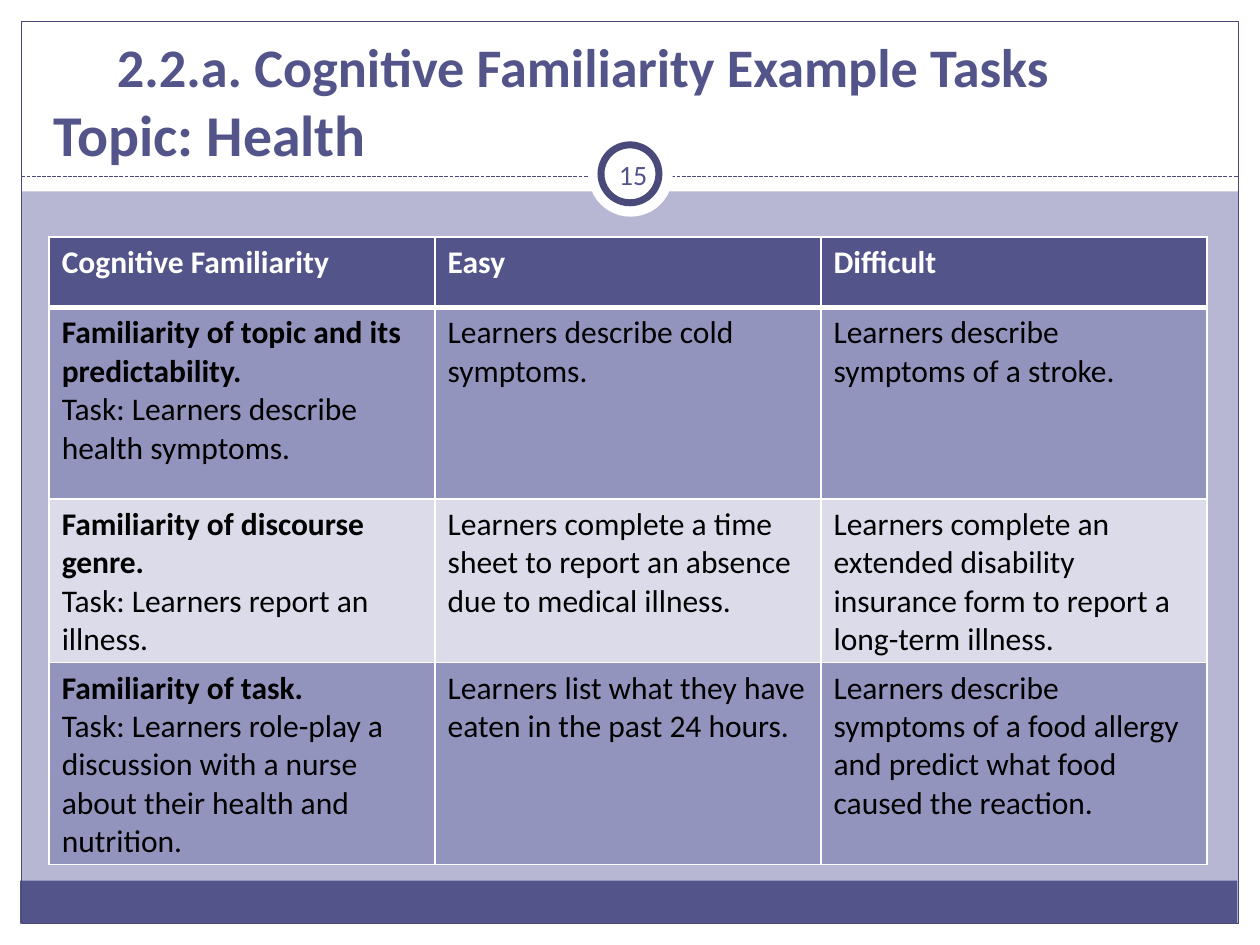
"""Build the slide on cognitive familiarity example tasks."""
from lxml.etree import SubElement
from pptx import Presentation
from pptx.dml.color import RGBColor
from pptx.enum.dml import MSO_LINE
from pptx.enum.shapes import MSO_CONNECTOR, MSO_SHAPE
from pptx.enum.text import MSO_ANCHOR, PP_ALIGN
from pptx.oxml.ns import qn
from pptx.util import Inches, Pt

WHITE, BLACK = "FFFFFF", "000000"
INDIGO, DARK_INDIGO = "53548A", "494A7A"
LAVENDER, BAND, PALE_BAND = "B7B7D4", "9394BE", "DBDBE9"

FRAME = [
    (0, 7.33, 10, 0.17, WHITE),
    (0, 0, 10, 1.52, WHITE),
    (0, 0, 0.17, 7.5, WHITE),
    (9.83, 0, 0.17, 7.5, WHITE),
    (0.16, 6.99, 9.66, 0.34, INDIGO),
]
TASKS = [
    (["Cognitive Familiarity"], "Easy", "Difficult"),
    (["Familiarity of topic and its predictability.",
      "Task: Learners describe health symptoms."],
     "Learners describe cold symptoms.",
     "Learners describe symptoms of a stroke."),
    (["Familiarity of discourse genre.",
      "Task: Learners report an illness."],
     "Learners complete a time sheet to report an absence due to medical illness.",
     "Learners complete an extended disability insurance form to report a long-term illness."),
    (["Familiarity of task.",
      "Task: Learners role-play a discussion with a nurse about their health and nutrition."],
     "Learners list what they have eaten in the past 24 hours.",
     "Learners describe symptoms of a food allergy and predict what food caused the reaction."),
]
ROW_HEIGHTS = [0.56, 1.52, 1.23, 1.54]
ROW_FILLS = [INDIGO, BAND, PALE_BAND, BAND]


def color(hex_value):
    """Return the colour for a hex string."""
    return RGBColor.from_string(hex_value)


def style(font, size, hex_value, bold=False):
    """Set the typeface, size, colour and weight of a font."""
    font.name, font.size, font.bold = "Calibri", Pt(size), bold
    font.color.rgb = color(hex_value)


def add_panel(slide, kind, box, fill=None, line=None, width=0.75):
    """Add a preset shape with an optional fill and outline."""
    panel = slide.shapes.add_shape(kind, *map(Inches, box))
    panel.shadow.inherit = False
    if fill:
        panel.fill.solid()
        panel.fill.fore_color.rgb = color(fill)
    else:
        panel.fill.background()
    if line:
        panel.line.color.rgb = color(line)
        panel.line.width = Pt(width)
    else:
        panel.line.fill.background()


def add_divider(slide):
    """Add the dashed rule below the title."""
    divider = slide.shapes.add_connector(
        MSO_CONNECTOR.STRAIGHT, Inches(0.17), Inches(1.4), Inches(9.83), Inches(1.4))
    divider.line.color.rgb = color(DARK_INDIGO)
    divider.line.width = Pt(0.75)
    divider.line.dash_style = MSO_LINE.SQUARE_DOT
    SubElement(divider.element.spPr, qn("a:effectLst"))


def add_text_frame(slide, box):
    """Add a wrapping, vertically centred text box and return its frame."""
    frame = slide.shapes.add_textbox(*map(Inches, box)).text_frame
    frame.word_wrap = True
    frame.vertical_anchor = MSO_ANCHOR.MIDDLE
    return frame


def add_title(slide):
    """Add the two-line title, its first line set in by a tab."""
    title = add_text_frame(slide, (0.33, 0.16, 9.33, 1.25)).paragraphs[0]
    for text, size in (("\t", 33), ("2.2.a. Cognitive Familiarity Example Tasks", 31),
                       (None, 31), ("Topic: Health", 33)):
        if text is None:
            title.add_line_break()
            continue
        run = title.add_run()
        run.text = text
        style(run.font, size, INDIGO, bold=True)


def add_page_number(slide):
    """Add the page number inside the badge."""
    frame = add_text_frame(slide, (4.77, 1.12, 0.51, 0.52))
    frame.margin_left = frame.margin_right = Inches(0.05)
    number = frame.paragraphs[0]
    number.text = "15"
    number.alignment = PP_ALIGN.CENTER
    style(number.font, 16, INDIGO)


def add_borders(cell, top=1, bottom=1):
    """Draw white borders around a cell."""
    properties = cell._tc.get_or_add_tcPr()
    for side, width in (("L", 1), ("R", 1), ("T", top), ("B", bottom)):
        border = SubElement(properties, qn(f"a:ln{side}"), w=str(Pt(width)))
        SubElement(SubElement(border, qn("a:solidFill")), qn("a:srgbClr"), val=WHITE)


def fill_cell(cell, lines, row, column):
    """Write a cell's lines, with headings in bold."""
    add_borders(cell, top=3 if row == 1 else 1, bottom=3 if row == 0 else 1)
    cell.fill.solid()
    cell.fill.fore_color.rgb = color(ROW_FILLS[row])
    cell.text = "\n".join(lines)
    for index, paragraph in enumerate(cell.text_frame.paragraphs):
        heading = row == 0 or (column == 0 and index == 0)
        style(paragraph.font, 18, BLACK if row else WHITE, heading)


def add_task_table(slide):
    """Add the table of easy and difficult tasks."""
    table = slide.shapes.add_table(
        len(TASKS), 3, Inches(0.39), Inches(1.88), Inches(9.19), Inches(sum(ROW_HEIGHTS))).table
    for row, (factor, easy, difficult) in enumerate(TASKS):
        table.rows[row].height = Inches(ROW_HEIGHTS[row])
        for column, lines in enumerate((factor, [easy], [difficult])):
            fill_cell(table.cell(row, column), lines, row, column)


def main():
    """Build and save the slide."""
    deck = Presentation()
    deck.slide_width, deck.slide_height = Inches(10), Inches(7.5)
    slide = deck.slides.add_slide(deck.slide_layouts[6])
    slide.background.fill.solid()
    slide.background.fill.fore_color.rgb = color(LAVENDER)
    for *box, fill in FRAME:
        add_panel(slide, MSO_SHAPE.RECTANGLE, box, fill)
    add_panel(slide, MSO_SHAPE.RECTANGLE, (0.17, 0.17, 9.66, 7.16), line=DARK_INDIGO)
    add_divider(slide)
    add_panel(slide, MSO_SHAPE.OVAL, (4.67, 1.05, 0.67, 0.67), WHITE)
    add_panel(slide, MSO_SHAPE.OVAL, (4.77, 1.15, 0.46, 0.46), WHITE, DARK_INDIGO, 4)
    add_title(slide)
    add_task_table(slide)
    add_page_number(slide)
    deck.save("out.pptx")


if __name__ == "__main__":
    main()
